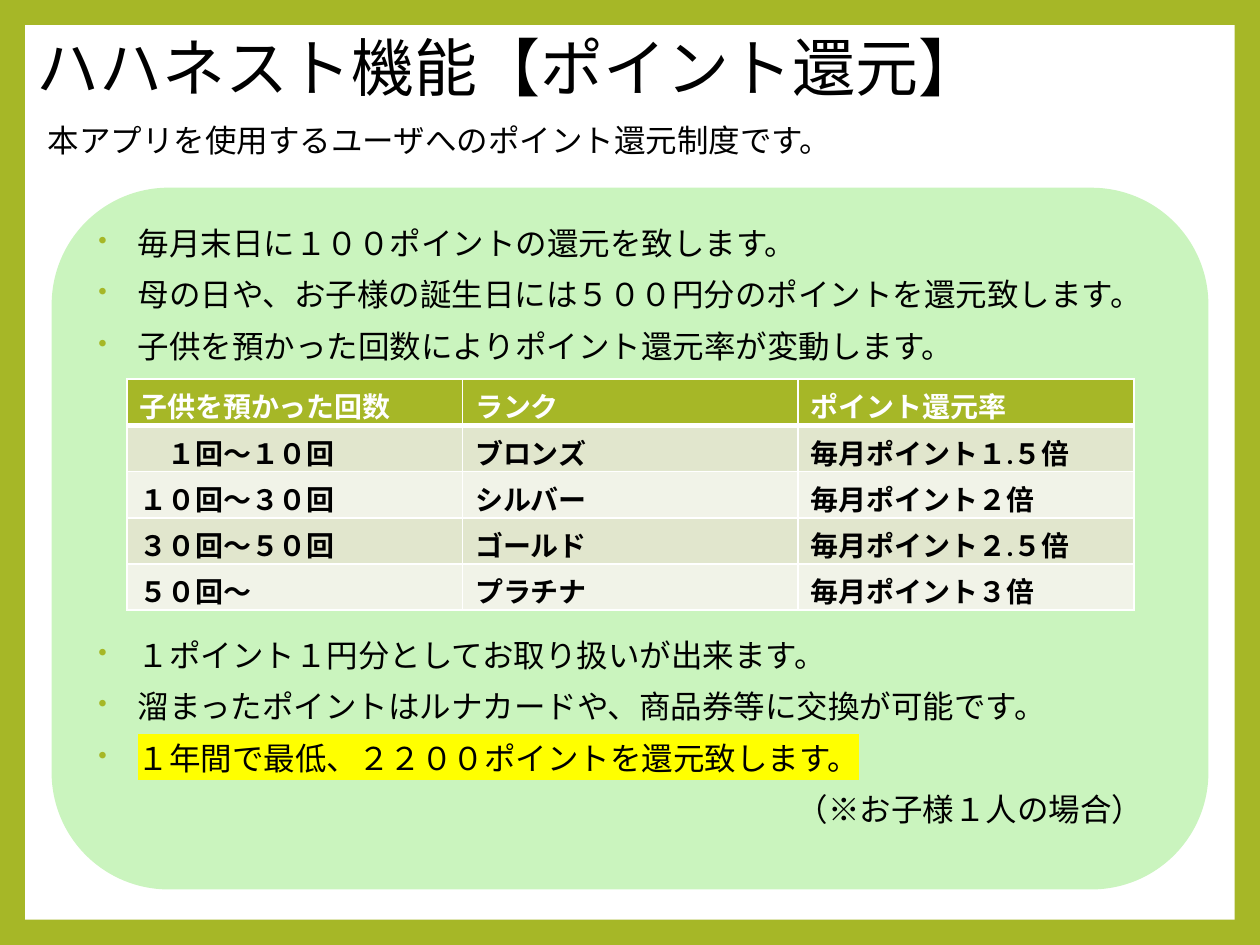
from dataclasses import dataclass
from lxml.etree import SubElement
from pptx import Presentation
from pptx.dml.color import RGBColor as RGB
from pptx.enum.shapes import MSO_SHAPE as Shape
from pptx.enum.text import MSO_ANCHOR as Anchor, PP_ALIGN as Align
from pptx.oxml.ns import qn
from pptx.util import Pt


@dataclass(frozen=True)
class Theme:
    font: str = "Calibri"
    green: str = "A6B727"
    pale: str = "CAF4BE"
    odd: str = "E1E6CD"
    even: str = "F1F3E8"
    mark: str = "FFFF00"
    white: str = "FFFFFF"
    black: str = "000000"
    title: int = 36
    body: int = 18
    cell: int = 16


def write(para, text, size, color, font, bold=False, mark=None):
    run = para.add_run()
    run.text = text
    run.font.size = Pt(size)
    run.font.bold = bold
    run.font.color.rgb = RGB.from_string(color)
    if mark:
        light = SubElement(run.font._element, qn("a:highlight"))
        SubElement(light, qn("a:srgbClr"), val=mark)
    run.font.name = font


def indent(para, left, first=0):
    props = para._p.get_or_add_pPr()
    props.set("marL", str(Pt(left)))
    props.set("indent", str(Pt(first)))
    return props


def bullet(para, color):
    props = indent(para, 22.5, -22.5)
    tint = SubElement(props, qn("a:buClr"))
    SubElement(tint, qn("a:srgbClr"), val=color)
    SubElement(props, qn("a:buSzPct"), val="80000")
    SubElement(props, qn("a:buChar"), char="•")


def border(cell, color, base):
    """Draw all four sides; base is the width of the lower one."""
    props = cell._tc.get_or_add_tcPr()
    sides = (("L", 1), ("R", 1), ("T", 1), ("B", base))
    for spot, (side, width) in enumerate(sides):
        line = props.makeelement(qn(f"a:ln{side}"), {"w": str(Pt(width))})
        fill = SubElement(line, qn("a:solidFill"))
        SubElement(fill, qn("a:srgbClr"), val=color)
        props.insert(spot, line)


class Deck:
    def __init__(self, theme):
        self.theme = theme
        self.file = Presentation()
        self.file.slide_width, self.file.slide_height = Pt(720), Pt(540)
        self.slide = self.file.slides.add_slide(self.file.slide_layouts[6])
        self.paint(self.slide.background, theme.green)

    def paint(self, item, color):
        item.fill.solid()
        item.fill.fore_color.rgb = RGB.from_string(color)

    def panel(self, kind, box, color):
        shape = self.slide.shapes.add_shape(kind, *map(Pt, box))
        shape.shadow.inherit = False
        self.paint(shape, color)
        shape.line.fill.background()
        return shape

    def label(self, text, box, size, space=1.0):
        frame = self.slide.shapes.add_textbox(*map(Pt, box)).text_frame
        frame.word_wrap = True
        frame.vertical_anchor = Anchor.MIDDLE
        para = frame.paragraphs[0]
        para.line_spacing = space
        write(para, text, size, self.theme.black, self.theme.font)

    def points(self, shape, lines):
        """Fill a shape with (text, space before, left indent, mark) lines.

        A line without a left indent gets a bullet.
        """
        frame = shape.text_frame
        frame.word_wrap = True
        frame.vertical_anchor = Anchor.TOP
        for i, (text, before, left, mark) in enumerate(lines):
            para = frame.add_paragraph() if i else frame.paragraphs[0]
            para.alignment = Align.LEFT
            para.line_spacing = 0.9
            para.space_before = Pt(before)
            if left:
                indent(para, left)
            else:
                bullet(para, self.theme.green)
            write(para, text, self.theme.body, self.theme.black,
                  self.theme.font, mark=mark)

    def table(self, rows, box):
        look = self.theme
        grid = self.slide.shapes.add_table(
            len(rows), len(rows[0]), *map(Pt, box)).table
        for r, row in enumerate(rows):
            grid.rows[r].height = Pt(box[3] / len(rows))
            fill = (look.odd if r % 2 else look.even) if r else look.green
            for c, text in enumerate(row):
                cell = grid.cell(r, c)
                cell.margin_top, cell.margin_bottom = Pt(3.6), Pt(0)
                self.paint(cell, fill)
                border(cell, look.white, 1 if r else 3)
                write(cell.text_frame.paragraphs[0], text, look.cell,
                      look.black if r else look.white, look.font, bold=True)


def main():
    look = Theme()
    deck = Deck(look)
    deck.panel(Shape.RECTANGLE, (14.4, 14.4, 691.2, 511.2), look.white)
    deck.label("ハハネスト機能【ポイント還元】", (13.7, 14.4, 583, 52),
               look.title, 0.9)
    body = deck.panel(Shape.ROUNDED_RECTANGLE, (29.5, 107.3, 661, 401),
                      look.pale)
    gap, leap = 10, 157
    deck.points(body, [
        ("毎月末日に１００ポイントの還元を致します。", gap, 0, None),
        ("母の日や、お子様の誕生日には５００円分のポイントを還元致します。",
         gap, 0, None),
        ("子供を預かった回数によりポイント還元率が変動します。", gap, 0, None),
        ("１ポイント１円分としてお取り扱いが出来ます。", leap, 0, None),
        ("溜まったポイントはルナカードや、商品券等に交換が可能です。",
         gap, 0, None),
        ("１年間で最低、２２００ポイントを還元致します。", gap, 0, look.mark),
        ("（※お子様１人の場合）", gap, 399, None),
    ])
    deck.label("本アプリを使用するユーザへのポイント還元制度です。",
               (20.2, 65.5, 480, 29), look.body)
    deck.table([
        ("子供を預かった回数", "ランク", "ポイント還元率"),
        ("　１回～１０回", "ブロンズ", "毎月ポイント１.５倍"),
        ("１０回～３０回", "シルバー", "毎月ポイント２倍"),
        ("３０回～５０回", "ゴールド", "毎月ポイント２.５倍"),
        ("５０回～", "プラチナ", "毎月ポイント３倍"),
    ], (72.5, 216.7, 575.4, 132))
    deck.file.save("out.pptx")


if __name__ == "__main__":
    main()
